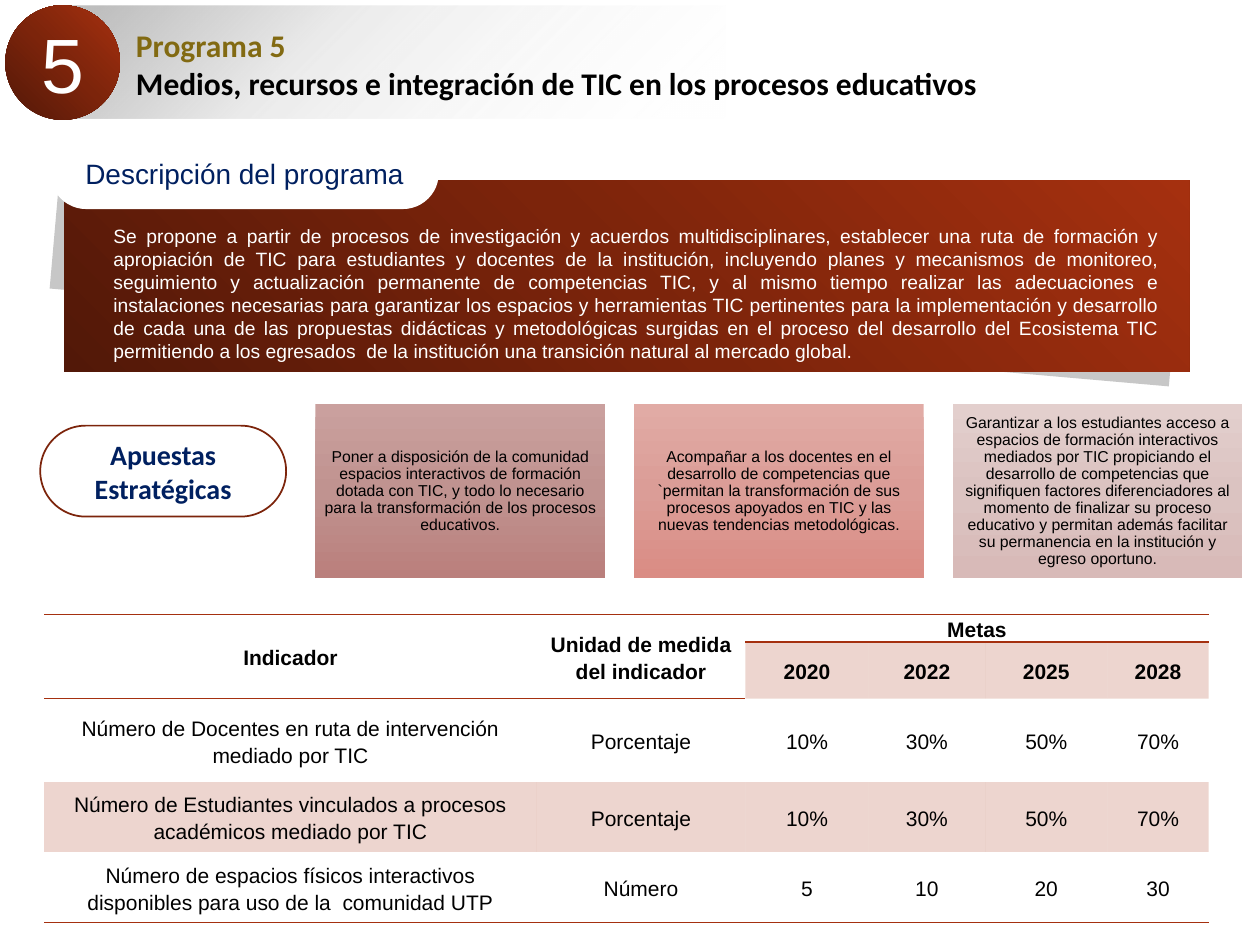
import lxml.etree
import pptx
import pptx.dml.color
import pptx.enum.shapes
import pptx.enum.text
import pptx.oxml.ns
import pptx.util

Pt = pptx.util.Pt
qn = pptx.oxml.ns.qn
SHAPES = pptx.enum.shapes.MSO_SHAPE
ALIGN = pptx.enum.text.PP_ALIGN
ANCHOR = pptx.enum.text.MSO_ANCHOR

COLORS = {
    "white": "FFFFFF", "black": "000000", "navy": "002060", "gold": "826A12",
    "rust": "A5300F", "brown": "7C240B", "dark": "521808",
    "silver": "BFBFBF", "charcoal": "323232",
}
RUST_STOPS = [(0, COLORS["dark"], 100), (50, COLORS["brown"], 100), (100, COLORS["rust"], 100)]
NO_TABLE_STYLE = "{2D5ABB26-0587-4C30-8999-92F81FD0307C}"

DESCRIPTION = (
    "Se propone a partir de procesos de investigación y acuerdos multidisciplinares, establecer una "
    "ruta de formación y apropiación de TIC para estudiantes y docentes de la institución, incluyendo "
    "planes y mecanismos de monitoreo, seguimiento y actualización permanente de competencias TIC, y al "
    "mismo tiempo realizar las adecuaciones e instalaciones necesarias para garantizar los espacios y "
    "herramientas TIC pertinentes para la implementación y desarrollo de cada una de las propuestas "
    "didácticas y metodológicas surgidas en el proceso del desarrollo del Ecosistema TIC permitiendo a "
    "los egresados  de la institución una transición natural al mercado global."
)
BETS = [
    (("CAA09E", "C09390", "BA7F7C"),
     "Poner a disposición de la comunidad espacios interactivos de formación dotada con TIC, y todo lo "
     "necesario para la transformación de los procesos educativos."),
    (("E1ABA5", "DB9D97", "DA8C84"),
     "Acompañar a los docentes en el desarrollo de competencias que `permitan la transformación de sus "
     "procesos apoyados en TIC y las nuevas tendencias metodológicas."),
    (("E3CFCD", "DBC3C1", "D8BAB8"),
     "Garantizar a los estudiantes acceso a espacios de formación interactivos mediados por TIC "
     "propiciando el desarrollo de competencias que signifiquen factores diferenciadores al momento de "
     "finalizar su proceso educativo y permitan además facilitar su permanencia en la institución y "
     "egreso oportuno."),
]
INDICATORS = [
    ["Indicador", "Unidad de medida del indicador", "Metas", "", "", ""],
    ["", "", "2020", "2022", "2025", "2028"],
    ["Número de Docentes en ruta de intervención mediado por TIC",
     "Porcentaje", "10%", "30%", "50%", "70%"],
    ["Número de Estudiantes vinculados a procesos académicos mediado por TIC",
     "Porcentaje", "10%", "30%", "50%", "70%"],
    ["Número de espacios físicos interactivos disponibles para uso de la  comunidad UTP",
     "Número", "5", "10", "20", "30"],
]


def rgb(color):
    return pptx.dml.color.RGBColor.from_string(color)


def fill_solid(fill, color, parent, alpha=100):
    """Fill with one colour; parent is the XML element that holds the fill."""
    fill.solid()
    fill.fore_color.rgb = rgb(color)
    if alpha < 100:
        color_element = parent.find(qn("a:solidFill"))[0]
        lxml.etree.SubElement(color_element, qn("a:alpha"), val=str(alpha * 1000))


def fill_gradient(shape, stops, angle):
    """Fill with (position, colour, opacity) stops; angle is counter-clockwise."""
    shape.fill.gradient()
    shape.fill.gradient_angle = angle
    stop_list = shape.element.spPr.find(qn("a:gradFill")).find(qn("a:gsLst"))
    for stop in list(stop_list):
        stop_list.remove(stop)
    for position, color, alpha in stops:
        stop = lxml.etree.SubElement(stop_list, qn("a:gs"), pos=str(position * 1000))
        color_element = lxml.etree.SubElement(stop, qn("a:srgbClr"), val=color)
        lxml.etree.SubElement(color_element, qn("a:alpha"), val=str(alpha * 1000))


def add_plain_shape(slide, kind, left, top, width, height, color=None, alpha=100):
    shape = slide.shapes.add_shape(kind, Pt(left), Pt(top), Pt(width), Pt(height))
    shape.shadow.inherit = False
    shape.line.fill.background()
    if color:
        fill_solid(shape.fill, color, shape.element.spPr, alpha)
    if kind == SHAPES.ROUNDED_RECTANGLE:
        shape.adjustments[0] = 0.5
    return shape


def format_paragraph(paragraph, size, color, font="Arial", bold=False, align=ALIGN.CENTER):
    paragraph.alignment = align
    paragraph.font.size = Pt(size)
    paragraph.font.name = font
    paragraph.font.bold = bold
    paragraph.font.color.rgb = rgb(color)


def write_text(shape, text, size, color, anchor=ANCHOR.MIDDLE, **style):
    frame = shape.text_frame
    frame.word_wrap = True
    frame.vertical_anchor = anchor
    frame.text = text
    for paragraph in frame.paragraphs:
        format_paragraph(paragraph, size, color, **style)
    return frame


def add_header(slide, left, top, width, height):
    """Numbered disc over a fading band, with the slide title."""
    band = add_plain_shape(slide, SHAPES.RECTANGLE, left + 33.5, top + 0.5, width - 33.5, height - 1)
    silver = COLORS["silver"]
    fill_gradient(band, [(5, silver, 100), (37, silver, 31), (100, COLORS["white"], 0)], 315)
    disc = add_plain_shape(slide, SHAPES.OVAL, left, top, height, height)
    fill_gradient(disc, RUST_STOPS, 45)
    write_text(disc, "5", 44, COLORS["white"])

    title = slide.shapes.title
    title.left, title.top, title.width, title.height = Pt(left + 67.5), Pt(top + 8.5), Pt(541), Pt(51)
    frame = write_text(title, "Programa 5\nMedios, recursos e integración de TIC en los procesos educativos",
                       18, COLORS["black"], ANCHOR.TOP, font="Calibri", bold=True, align=ALIGN.JUSTIFY)
    frame.auto_size = pptx.enum.text.MSO_AUTO_SIZE.NONE
    frame.paragraphs[0].font.color.rgb = rgb(COLORS["gold"])
    slide.shapes.element.append(title.element)


def add_description(slide, left, top, width, height):
    backing = add_plain_shape(slide, SHAPES.RECTANGLE, left - 6.5, top + 19.5, width - 1, 70.5,
                              COLORS["charcoal"], 27)
    backing.rotation = 5
    panel = add_plain_shape(slide, SHAPES.RECTANGLE, left, top, width, height)
    fill_gradient(panel, RUST_STOPS, 45)
    tab = add_plain_shape(slide, SHAPES.ROUNDED_RECTANGLE, left - 8, top - 24.5, 222, 41, COLORS["white"])
    write_text(tab, "Descripción del programa", 16, COLORS["navy"])
    body = slide.shapes.add_textbox(Pt(left + 21), Pt(top + 21.5), Pt(612), Pt(height - 21.5))
    write_text(body, DESCRIPTION, 11, COLORS["white"], ANCHOR.TOP, align=ALIGN.JUSTIFY)


def add_bets(slide, left, top, width, height):
    """Label pill followed by a row of equal cards."""
    pill = add_plain_shape(slide, SHAPES.ROUNDED_RECTANGLE, left, top + 12.25, 140.5, 52, COLORS["white"])
    pill.line.color.rgb = rgb(COLORS["brown"])
    pill.line.width = Pt(1)
    write_text(pill, "Apuestas Estratégicas", 16, COLORS["navy"], font="Calibri", bold=True)

    card_width, gap = 165.6, 16.5
    first_left = left + width - len(BETS) * card_width - (len(BETS) - 1) * gap
    for index, (shades, text) in enumerate(BETS):
        card = add_plain_shape(slide, SHAPES.RECTANGLE, first_left + index * (card_width + gap), top,
                               card_width, height)
        fill_gradient(card, [(50 * step, shade, 100) for step, shade in enumerate(shades)], 270)
        frame = write_text(card, text, 9, COLORS["black"])
        frame.margin_left = frame.margin_right = frame.margin_top = frame.margin_bottom = Pt(3)
        frame.paragraphs[0].line_spacing = 0.9


def add_border(cell, side):
    line = lxml.etree.SubElement(cell._tc.get_or_add_tcPr(), qn("a:" + side), w=str(Pt(1)))
    fill = lxml.etree.SubElement(line, qn("a:solidFill"))
    lxml.etree.SubElement(fill, qn("a:srgbClr"), val=COLORS["rust"])


def format_cell(cell, row, column):
    """Borders close the heading, the goals label and the table; row 3 and the years are tinted."""
    if row == 0:
        add_border(cell, "lnT")
    if row in (0, 4) or (row == 1 and column < 2):
        add_border(cell, "lnB")
    if row == 3 or (row == 1 and column >= 2):
        fill_solid(cell.fill, COLORS["rust"], cell._tc.tcPr, 20)
    elif row >= 2:
        fill_solid(cell.fill, COLORS["white"], cell._tc.tcPr)
    else:
        cell.fill.background()
    cell.vertical_anchor = ANCHOR.MIDDLE
    cell.margin_left = cell.margin_right = Pt(3.5)
    cell.margin_top = cell.margin_bottom = 0
    paragraph = cell.text_frame.paragraphs[0]
    format_paragraph(paragraph, 12, COLORS["black"], bold=row < 2)
    paragraph.line_spacing = 1.15


def add_indicators(slide, left, top, width, height):
    table = slide.shapes.add_table(5, 6, Pt(left), Pt(top), Pt(width), Pt(height)).table
    table.first_row = table.horz_banding = False
    table._tbl.tblPr.find(qn("a:tableStyleId")).text = NO_TABLE_STYLE
    for column, share in zip(table.columns, (0.423, 0.179, 0.106, 0.1, 0.105, 0.087)):
        column.width = Pt(round(width * share, 2))
    for row, share in zip(table.rows, (0.088, 0.185, 0.271, 0.228, 0.228)):
        row.height = Pt(round(height * share, 2))
    for row, texts in enumerate(INDICATORS):
        for column, text in enumerate(texts):
            cell = table.cell(row, column)
            cell.text = text
            format_cell(cell, row, column)
    for start, end in (((0, 0), (1, 0)), ((0, 1), (1, 1)), ((0, 2), (0, 5))):
        table.cell(*start).merge(table.cell(*end))


def main():
    presentation = pptx.Presentation()
    presentation.slide_width, presentation.slide_height = Pt(720), Pt(540)
    slide = presentation.slides.add_slide(presentation.slide_layouts[5])
    add_bets(slide, 23, 231, 687, 99.5)
    add_indicators(slide, 25.25, 351.25, 665.5, 176)
    add_description(slide, 36.75, 103, 643, 109.5)
    add_header(slide, 3, 3, 411.5, 65.5)
    presentation.save("out.pptx")


if __name__ == "__main__":
    main()
